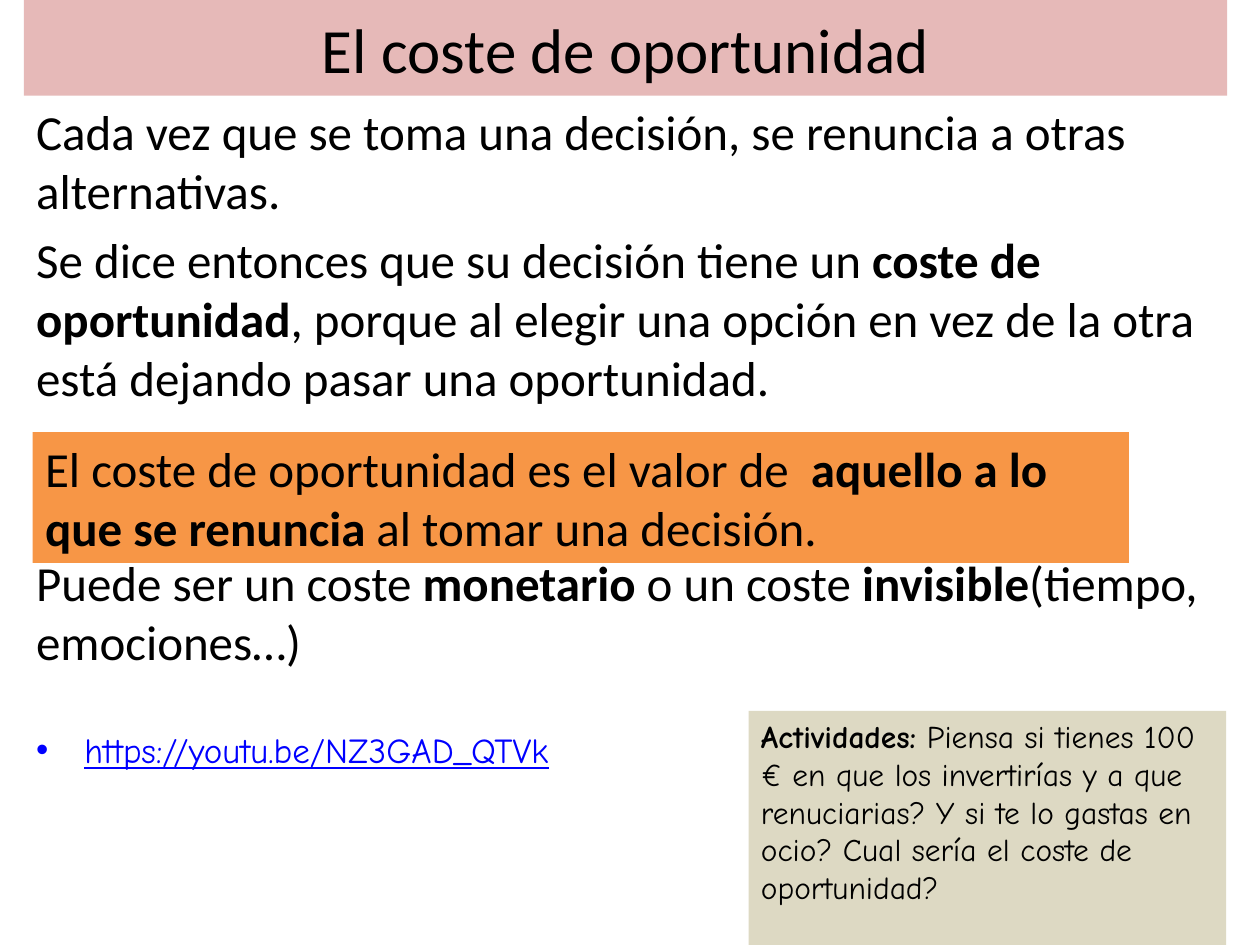
from lxml import etree
from pptx import Presentation
from pptx import util as u
from pptx.dml.color import RGBColor
from pptx.enum import shapes, text
from pptx.oxml.ns import qn

BLACK = RGBColor(0x00, 0x00, 0x00)
LINK_BLUE = RGBColor(0x00, 0x00, 0xFF)
PINK = RGBColor(0xE6, 0xB9, 0xB8)
ORANGE = RGBColor(0xF7, 0x96, 0x46)
SAND = RGBColor(0xDD, 0xD9, 0xC3)

# Content: each paragraph is a list of (wording, bold) spans
TITLE = [("El coste de oportunidad", False)]
BODY = [
    [("Cada vez que se toma una decisión, se renuncia a otras alternativas.", False)],
    [("Se dice entonces que su decisión tiene un ", False),
     ("coste de oportunidad", True),
     (", porque al elegir una opción en vez de la otra está dejando pasar "
      "una oportunidad.", False)],
    [("Puede ser un coste ", False), ("monetario", True), (" o un coste ", False),
     ("invisible", True), ("(tiempo, emociones…)", False)],
]
SPACE_BEFORE = [0, 5.6, 84]
VIDEO = [("https://youtu.be/NZ3GAD_QTVk", False)]
DEFINITION = [("El coste de oportunidad es el valor de  ", False),
              ("aquello a lo que se renuncia", True),
              (" al tomar una decisión.", False)]
ACTIVITY = [("Actividades:", True),
            (" Piensa si tienes 100 € en que los invertirías y a que renuciarias? "
             "Y si te lo gastas en ocio? Cual sería el coste de oportunidad?", False)]

# Layout in centimetres
LEFT, WIDTH, TITLE_HEIGHT = 0.48, 24.26, 1.93


def write(para, spans, size, font="Calibri", colour=BLACK):
    for wording, bold in spans:
        span = para.add_run()
        span.text = wording
        span.font.name = font
        span.font.size = u.Pt(size)
        span.font.bold = bold
        span.font.color.rgb = colour


def add_panel(slide, place, fill, spans, size, font="Calibri",
              align=text.PP_ALIGN.LEFT, anchor=text.MSO_ANCHOR.TOP):
    panel = slide.shapes.add_shape(shapes.MSO_SHAPE.RECTANGLE, *map(u.Cm, place))
    panel.shadow.inherit = False
    panel.fill.solid()
    panel.fill.fore_color.rgb = fill
    panel.line.fill.background()
    frame = panel.text_frame
    frame.word_wrap = True
    frame.vertical_anchor = anchor
    frame.paragraphs[0].alignment = align
    write(frame.paragraphs[0], spans, size, font)


def add_bullet(para, indent):
    props = para._p.get_or_add_pPr()
    props.set("marL", str(u.Cm(indent)))
    props.set("indent", str(-u.Cm(indent)))
    etree.SubElement(props, qn("a:buFont"), typeface="Arial")
    etree.SubElement(props, qn("a:buChar"), char="•")


def main():
    deck = Presentation()
    deck.slide_width, deck.slide_height = u.Cm(25.4), u.Cm(19.05)
    slide = deck.slides.add_slide(deck.slide_layouts[6])

    # Title band
    add_panel(slide, (LEFT, 0, WIDTH, TITLE_HEIGHT), PINK, TITLE, 36,
              align=text.PP_ALIGN.CENTER, anchor=text.MSO_ANCHOR.MIDDLE)

    # Explanation, leaving room for the definition panel
    box = slide.shapes.add_textbox(*map(u.Cm, (LEFT, TITLE_HEIGHT, WIDTH, 14.05)))
    frame = box.text_frame
    frame.word_wrap = True
    for index, (spans, space) in enumerate(zip(BODY, SPACE_BEFORE)):
        para = frame.add_paragraph() if index else frame.paragraphs[0]
        para.space_before = u.Pt(space)
        write(para, spans, 28)

    # Video address
    para = frame.add_paragraph()
    para.space_before = u.Pt(33)
    add_bullet(para, 0.97)
    write(para, VIDEO, 20, "Comic Neue", LINK_BLUE)
    para.runs[0].font.underline = True

    # Definition and activity panels
    add_panel(slide, (0.66, 8.71, 22.1, 2.64), ORANGE, DEFINITION, 28)
    add_panel(slide, (15.09, 14.33, 9.63, 4.88), SAND, ACTIVITY, 18, "Comic Neue")

    deck.save("out.pptx")


if __name__ == "__main__":
    main()
